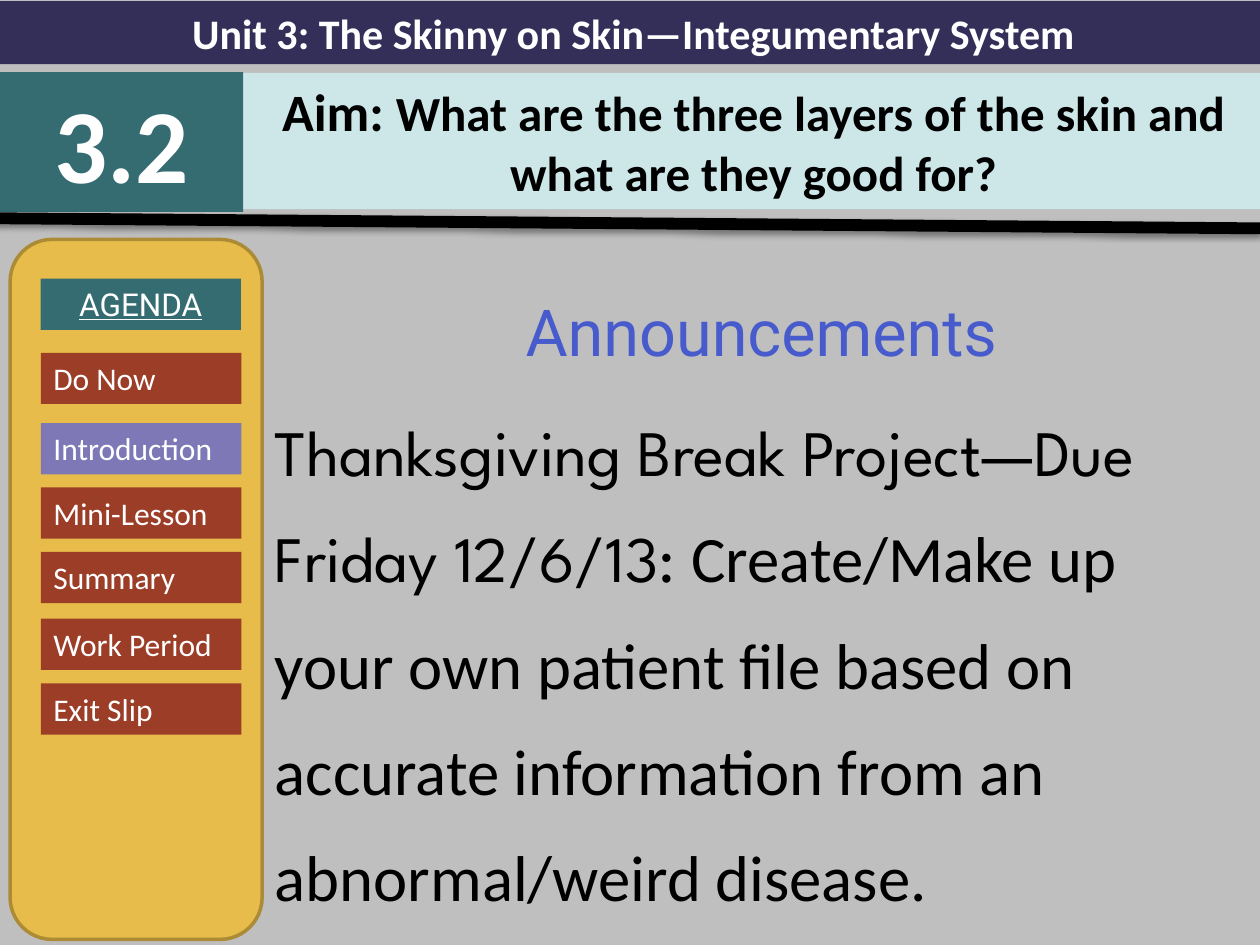
import pptx
import pptx.util
import pptx.dml.color
import pptx.enum.shapes
import pptx.enum.text
import pptx.oxml

Pt = pptx.util.Pt
Kind = pptx.enum.shapes.MSO_SHAPE
Align = pptx.enum.text.PP_ALIGN
Anchor = pptx.enum.text.MSO_ANCHOR
NS = "http://schemas.openxmlformats.org/drawingml/2006/main"


def color(code):
    """Turn a hex string into a colour."""
    return pptx.dml.color.RGBColor.from_string(code)


def style(run, size, ink, font="Calibri", bold=False):
    """Format one run."""
    run.font.size = Pt(size)
    run.font.name = font
    run.font.bold = bold
    run.font.color.rgb = color(ink)


def block(slide, box, fill, kind=Kind.RECTANGLE):
    """Add a plain filled shape."""
    shape = slide.shapes.add_shape(kind, *map(Pt, box))
    shape.shadow.inherit = False
    shape.fill.solid()
    shape.fill.fore_color.rgb = color(fill)
    shape.line.fill.background()
    return shape


def label(slide, box, fill, parts, align=Align.CENTER, **look):
    """Add a filled box holding one paragraph of (text, size, ink) parts."""
    shape = block(slide, box, fill)
    frame = shape.text_frame
    frame.word_wrap = True
    frame.vertical_anchor = Anchor.TOP
    line = frame.paragraphs[0]
    line.alignment = align
    for text, size, ink in parts:
        run = line.add_run()
        run.text = text
        style(run, size, ink, **look)
    return shape


def rule(slide, left, top, right, end):
    """Draw the thick shadowed rule under the header."""
    line = slide.shapes.add_connector(
        pptx.enum.shapes.MSO_CONNECTOR.STRAIGHT, *map(Pt, (left, top, right, end)))
    line.line.width = Pt(6.75)
    line.line.color.rgb = color("000000")
    line._element.spPr.append(pptx.oxml.parse_xml(
        f'<a:effectLst xmlns:a="{NS}"><a:outerShdw blurRad="{Pt(3.1)}" dist="{Pt(1.6)}"'
        ' dir="5400000" rotWithShape="0"><a:srgbClr val="000000"><a:alpha val="38000"/>'
        '</a:srgbClr></a:outerShdw></a:effectLst>'))


def header(slide, left, top, width):
    """Place the unit bar, lesson number, aim and rule."""
    label(slide, (left, top, width, 36), "342F59",
          [("Unit 3: The Skinny on Skin—Integumentary System", 24, "FFFFFF")], bold=True)
    label(slide, (left, top + 40.5, 139, 80), "346C71", [("3.2", 60, "FFFFFF")], bold=True)
    label(slide, (left + 139, top + 41, 583, 77.8), "CDE6E8",
          [("Aim: ", 30, "000000"),
           ("What are the three layers of the skin and what are they good for?", 28, "000000")],
          bold=True)
    rule(slide, left - 3.6, top + 124, left + 720, top + 129.8)


def agenda(slide, left, top, width, height):
    """Place the agenda panel and its steps."""
    panel = block(slide, (left, top, width, height), "E8BC4A", Kind.ROUNDED_RECTANGLE)
    panel.line.color.rgb = color("AC8B37")
    panel.line.width = Pt(2)
    wide, high = 114.5, 29.3
    head = label(slide, (left + 17.4, top + 22.5, wide, high), "346C71",
                 [("AGENDA", 18, "FFFFFF")], font="Roboto")
    head.text_frame.paragraphs[0].runs[0].font.underline = True
    steps = [("Do Now", 64.8), ("Introduction", 105), ("Mini-Lesson", 141.8),
             ("Summary", 178.6), ("Work Period", 216.7), ("Exit Slip", 253.7)]
    for name, drop in steps:
        fill = "7E78B7" if name == "Introduction" else "9C3D28"
        label(slide, (left + 17.6, top + drop, wide, high), fill,
              [(name, 18, "FFFFFF")], Align.LEFT)


def notice(slide, left, top, width, height):
    """Place the announcements text."""
    frame = slide.shapes.add_textbox(*map(Pt, (left, top, width, height))).text_frame
    frame.word_wrap = True
    title, body = frame.paragraphs[0], frame.add_paragraph()
    title.alignment = Align.CENTER
    texts = [
        (title, "Announcements", "475BCD", "Roboto"),
        (body, "Thanksgiving Break Project—Due Friday 12/6/13: ", "000000", "League Spartan"),
        (body, "Create/Make up your own patient file based on accurate information "
               "from an abnormal/weird disease.", "000000", "Calibri"),
    ]
    for line, text, ink, font in texts:
        line.line_spacing = 1.37
        line.space_before = Pt(7.4)
        run = line.add_run()
        run.text = text
        style(run, 37, ink, font)


def main():
    """Build and save the slide."""
    deck = pptx.Presentation()
    deck.slide_width, deck.slide_height = Pt(720), Pt(540)
    slide = deck.slides.add_slide(deck.slide_layouts[6])
    slide.background.fill.solid()
    slide.background.fill.fore_color.rgb = color("BFBFBF")
    notice(slide, 150, 147, 570, 393)
    header(slide, 0, 0.7, 724)
    agenda(slide, 5.8, 136.8, 144, 400)
    deck.save("out.pptx")


if __name__ == "__main__":
    main()
